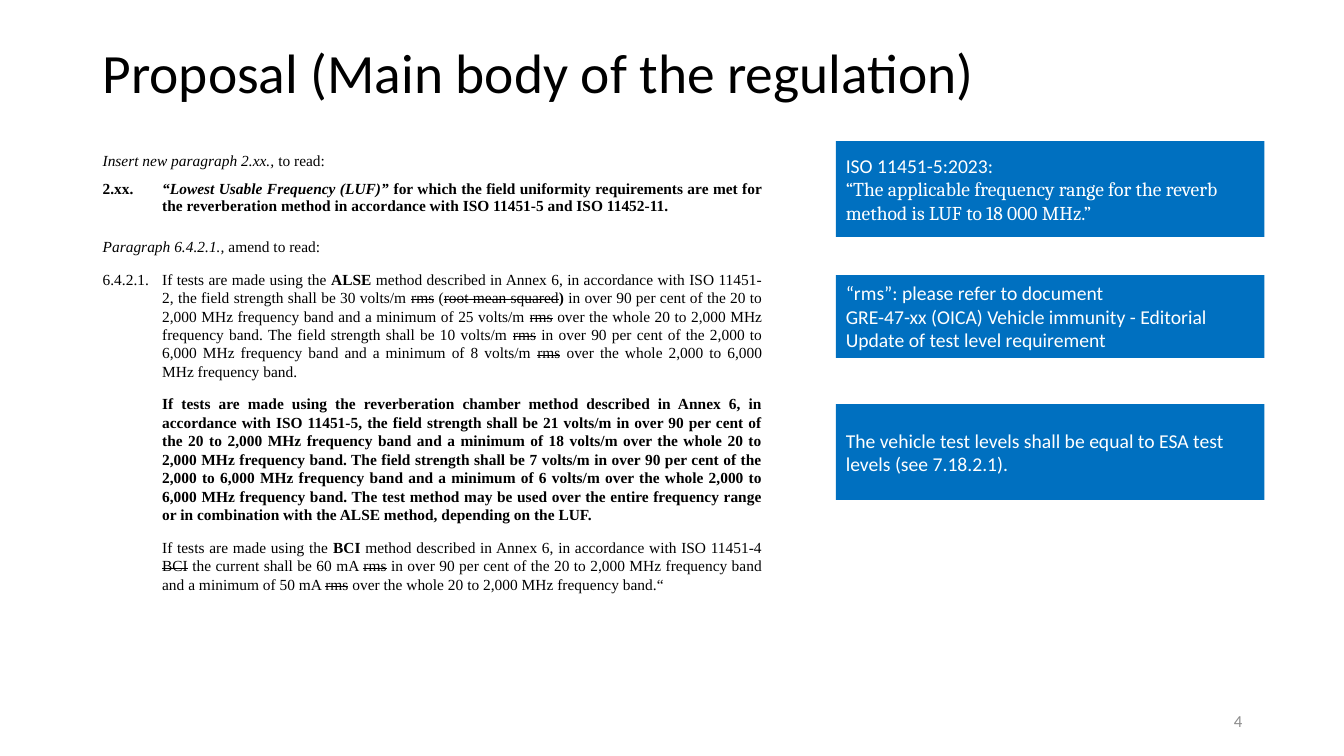
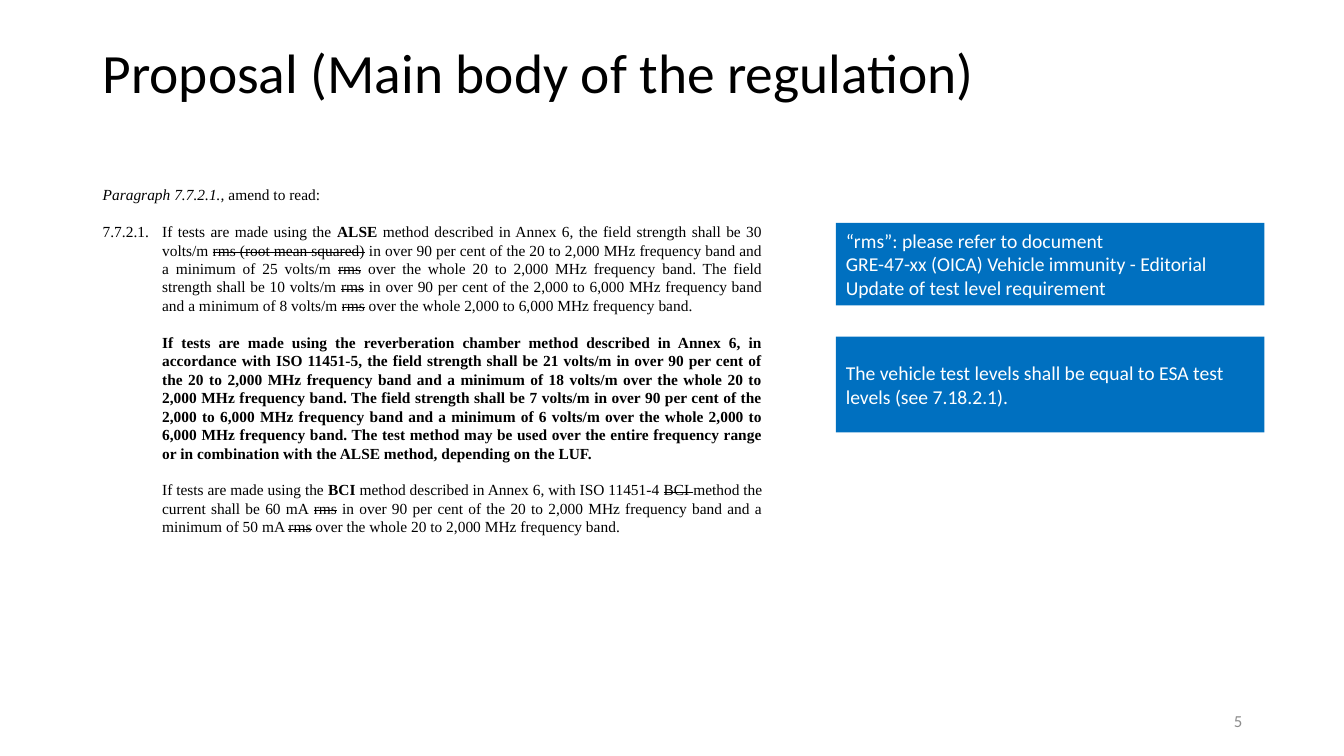
"""Build two slides proposing amendments to the main body of the regulation."""
from pptx import Presentation
from pptx.dml.color import RGBColor
from pptx.enum.shapes import MSO_SHAPE
from pptx.enum.text import MSO_ANCHOR, MSO_AUTO_SIZE, PP_ALIGN
from pptx.util import Inches, Pt

BLUE, BLACK, WHITE, GREY = "0070C0", "000000", "FFFFFF", "8C8C8C"
TITLE = "Proposal (Main body of the regulation)"
MARKS = {"*": "b", "_": "i", "~": "strike"}

TITLE_STYLE = {"font": "Calibri", "size": 39.6, "color": BLACK, "line_spacing": 0.9}
NUMBER_STYLE = {"font": "Calibri", "size": 12, "color": GREY, "alignment": PP_ALIGN.RIGHT}
CALLOUT_STYLE = {"font": "Calibri", "size": 14, "color": WHITE, "alignment": PP_ALIGN.LEFT}
QUOTE_STYLE = CALLOUT_STYLE | {"font": "Cambria"}
LEAD_STYLE = {"font": "Times New Roman", "size": 11, "color": BLACK, "alignment": PP_ALIGN.JUSTIFY}
CLAUSE_STYLE = LEAD_STYLE | {"hanging": 0.59}
TIGHT = {"line_spacing": Pt(12), "space_after": Pt(6)}
SPACED = CLAUSE_STYLE | {"space_before": Pt(10)}
AIRY = CLAUSE_STYLE | {"space_before": Pt(13)}

REVERB_CLAUSE = (
    "\t*If tests are made using the reverberation chamber method described in Annex 6, in accordance "
    "with ISO 11451-5, the field strength shall be 21 volts/m in over 90 per cent of the 20 to 2,000 MHz "
    "frequency band and a minimum of 18 volts/m over the whole 20 to 2,000 MHz frequency band. The field "
    "strength shall be 7 volts/m in over 90 per cent of the 2,000 to 6,000 MHz frequency band and a minimum "
    "of 6 volts/m over the whole 2,000 to 6,000 MHz frequency band. The test method may be used over the "
    "entire frequency range or in combination with the ALSE method, depending on the LUF.*"
)
ALSE_LEVELS = (
    "in over 90 per cent of the 20 to 2,000 MHz frequency band and a minimum of 25 volts/m ~rms~ over the "
    "whole 20 to 2,000 MHz frequency band. The field strength shall be 10 volts/m ~rms~ in over 90 per cent "
    "of the 2,000 to 6,000 MHz frequency band and a minimum of 8 volts/m ~rms~ over the whole 2,000 to "
    "6,000 MHz frequency band."
)
BCI_LEVELS = (
    "the current shall be 60 mA ~rms~ in over 90 per cent of the 20 to 2,000 MHz frequency band and a "
    "minimum of 50 mA ~rms~ over the whole 20 to 2,000 MHz frequency band."
)
ISO_NOTE = [
    ("ISO 11451-5:2023:", CALLOUT_STYLE),
    ("“The applicable frequency range for the reverb method is LUF to 18 000 MHz.”", QUOTE_STYLE),
]
RMS_NOTE = [
    ("“rms”: please refer to document", CALLOUT_STYLE),
    ("GRE-47-xx (OICA) Vehicle immunity - Editorial Update of test level requirement", CALLOUT_STYLE),
]
LEVEL_NOTE = [("The vehicle test levels shall be equal to ESA test levels (see 7.18.2.1).", CALLOUT_STYLE)]

SLIDES = [
    {
        "number": "4",
        "body": (1.47, 4.7),
        "clauses": [
            ("_Insert new paragraph 2.xx.,_ to read:", LEAD_STYLE | TIGHT),
            (
                "*2.xx.\t_“Lowest Usable Frequency (LUF)”_ for which the field uniformity requirements are "
                "met for the reverberation method in accordance with ISO 11451-5 and ISO 11452-11.*",
                CLAUSE_STYLE | TIGHT | {"space_before": Pt(2)},
            ),
            ("_Paragraph 6.4.2.1.,_ amend to read:", SPACED),
            (
                "6.4.2.1.\tIf tests are made using the *ALSE* method described in Annex 6, in accordance with "
                "ISO 11451-2, the field strength shall be 30 volts/m ~rms~ (~root mean squared~*)* "
                + ALSE_LEVELS,
                SPACED,
            ),
            (REVERB_CLAUSE, SPACED),
            (
                "\tIf tests are made using the *BCI* method described in Annex 6, in accordance with "
                "ISO 11451-4 ~BCI~ " + BCI_LEVELS + "“",
                SPACED,
            ),
        ],
        "callouts": [(1.4, 0.95, ISO_NOTE), (2.73, 0.82, RMS_NOTE), (4.01, 0.95, LEVEL_NOTE)],
    },
    {
        "number": "5",
        "body": (1.79, 3.62),
        "clauses": [
            ("_Paragraph 7.7.2.1.,_ amend to read:", LEAD_STYLE | {"alignment": PP_ALIGN.LEFT}),
            (
                "7.7.2.1.\tIf tests are made using the *ALSE* method described in Annex 6, the field strength "
                "shall be 30 volts/m ~rms (root mean squared)~ " + ALSE_LEVELS,
                AIRY,
            ),
            (REVERB_CLAUSE, AIRY),
            (
                "\tIf tests are made using the *BCI* method described in Annex 6, with ISO 11451-4 "
                "~BCI ~method " + BCI_LEVELS,
                AIRY,
            ),
        ],
        "callouts": [(2.21, 0.82, RMS_NOTE), (3.34, 0.95, LEVEL_NOTE)],
    },
]


def rgb(color):
    """Turn a hex string into a colour."""
    return RGBColor.from_string(color)


def write(shape, paragraphs, anchor=MSO_ANCHOR.MIDDLE):
    """Fill a shape with paragraphs; * _ ~ switch bold, italic and strike."""
    frame = shape.text_frame
    frame.word_wrap = True
    frame.vertical_anchor = anchor
    for index, (text, style) in enumerate(paragraphs):
        paragraph = frame.paragraphs[0] if index == 0 else frame.add_paragraph()
        for name in ("alignment", "line_spacing", "space_before", "space_after"):
            if name in style:
                setattr(paragraph, name, style[name])
        if "hanging" in style:
            properties = paragraph._p.get_or_add_pPr()
            properties.set("marL", str(Inches(style["hanging"])))
            properties.set("indent", str(-Inches(style["hanging"])))
        active, chunk = set(), ""
        for character in text + "\n":
            if character not in MARKS and character != "\n":
                chunk += character
                continue
            if chunk:
                run = paragraph.add_run()
                run.text = chunk
                run.font.name = style["font"]
                run.font.size = Pt(style["size"])
                run.font.color.rgb = rgb(style["color"])
                run.font.bold = "b" in active
                run.font.italic = "i" in active
                if "strike" in active:
                    run.font._element.set("strike", "sngStrike")
                chunk = ""
            active ^= {MARKS.get(character)}


presentation = Presentation()
presentation.slide_width = Inches(13.33)
presentation.slide_height = Inches(7.5)

for content in SLIDES:
    slide = presentation.slides.add_slide(presentation.slide_layouts[6])
    title = slide.shapes.add_textbox(Inches(0.92), Inches(0.4), Inches(11.5), Inches(0.7))
    write(title, [(TITLE, TITLE_STYLE)])
    number = slide.shapes.add_textbox(Inches(9.42), Inches(6.95), Inches(3), Inches(0.4))
    write(number, [(content["number"], NUMBER_STYLE)])

    top, height = content["body"]
    body = slide.shapes.add_textbox(Inches(0.92), Inches(top), Inches(6.74), Inches(height))
    write(body, content["clauses"], MSO_ANCHOR.TOP)
    body.text_frame.auto_size = MSO_AUTO_SIZE.SHAPE_TO_FIT_TEXT

    for top, height, note in content["callouts"]:
        callout = slide.shapes.add_shape(
            MSO_SHAPE.RECTANGLE, Inches(8.29), Inches(top), Inches(4.25), Inches(height)
        )
        callout.shadow.inherit = False
        callout.fill.solid()
        callout.fill.fore_color.rgb = rgb(BLUE)
        callout.line.fill.background()
        write(callout, note)

presentation.save("out.pptx")
